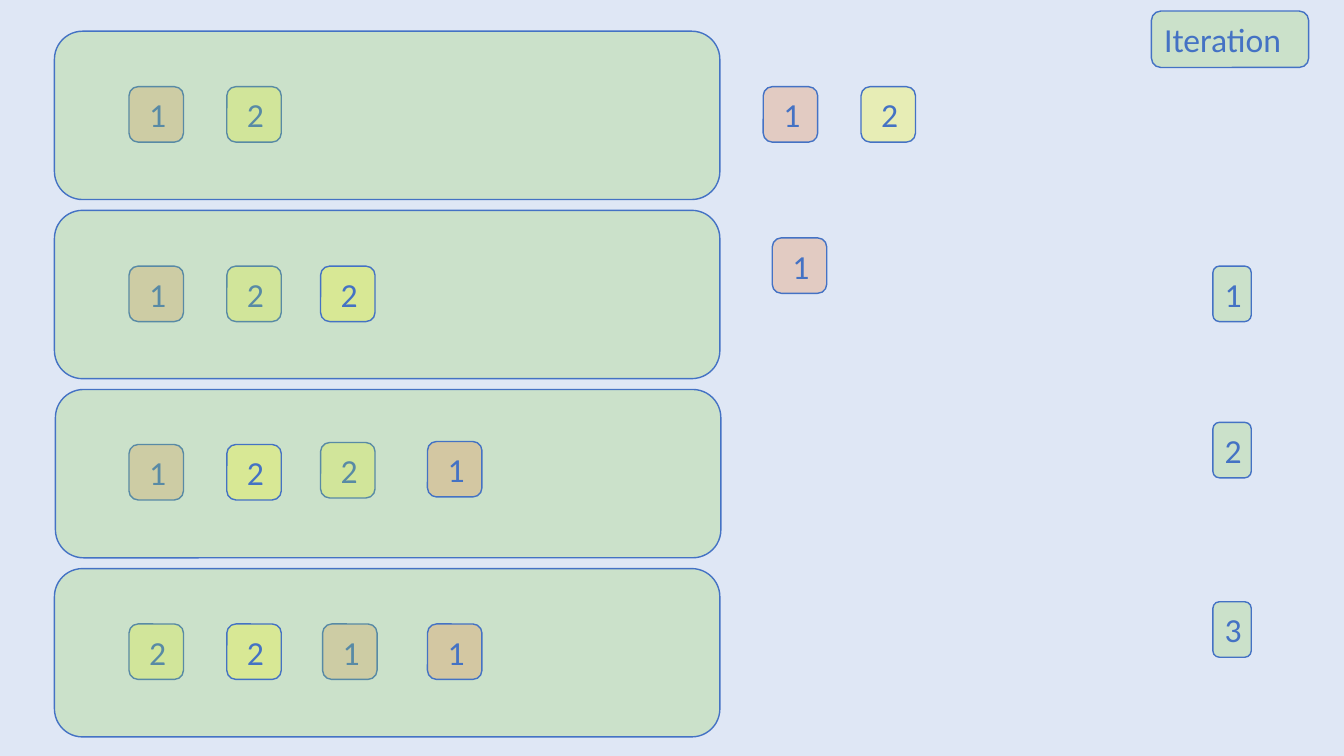
from lxml import etree
from pptx import Presentation
from pptx.dml.color import RGBColor
from pptx.enum.shapes import MSO_SHAPE
from pptx.enum.text import MSO_ANCHOR, MSO_AUTO_SIZE, PP_ALIGN
from pptx.oxml.ns import qn
from pptx.util import Inches, Pt

ROUNDED = MSO_SHAPE.ROUNDED_RECTANGLE
MIDDLE = MSO_ANCHOR.MIDDLE
GROW = MSO_AUTO_SIZE.SHAPE_TO_FIT_TEXT
LEFT = PP_ALIGN.LEFT

COLORS = {"background": "DFE7F5", "blue": "4472C4", "panel": "92D050",
          "1": "ED7D31", "2": "FFFF00"}
OPACITY = 26

# Each row: panel left, tiles behind the panel, tiles in front (digit, left, top),
# and the iteration label with its top.
ROWS = [
    (0.54, [("1", 1.28, 0.86), ("2", 2.25, 0.86)],
     [("1", 7.57, 0.86), ("2", 8.54, 0.86)], ("Iteration", 0.11)),
    (0.54, [("1", 1.28, 2.64), ("2", 2.25, 2.64)],
     [("2", 3.18, 2.64), ("1", 7.66, 2.36)], ("1", 2.64)),
    (0.55, [("1", 1.28, 4.41), ("2", 3.18, 4.39)],
     [("1", 4.24, 4.38), ("2", 2.25, 4.41)], ("2", 4.19)),
    (0.54, [("1", 3.2, 6.19), ("2", 1.28, 6.19)],
     [("1", 4.24, 6.19), ("2", 2.25, 6.19)], ("3", 5.97)),
]
PANEL_TOP, PANEL_PITCH = 0.31, 1.777
PANEL_WIDTH, PANEL_HEIGHT = 6.6, 1.67
TILE_WIDTH, TILE_HEIGHT = 0.54, 0.55


def add_box(slide, left, top, width, height, color, text=""):
    """Add a translucent rounded box with a blue outline and optional text."""
    box = slide.shapes.add_shape(ROUNDED, Inches(left), Inches(top),
                                 Inches(width), Inches(height))
    box.shadow.inherit = False
    box.fill.solid()
    box.fill.fore_color.rgb = RGBColor.from_string(COLORS[color])
    color_element = box.fill._xPr.find(qn("a:solidFill"))[0]
    etree.SubElement(color_element, qn("a:alpha"), val=str(OPACITY * 1000))
    box.line.color.rgb = RGBColor.from_string(COLORS["blue"])
    box.line.width = Pt(1)
    if text:
        frame = box.text_frame
        frame.text = text
        frame.word_wrap = True
        frame.auto_size = GROW
        frame.vertical_anchor = MIDDLE
        para = frame.paragraphs[0]
        para.alignment = LEFT
        font = para.runs[0].font
        font.name = "Calibri"
        font.size = Pt(24)
        font.color.rgb = RGBColor.from_string(COLORS["blue"])


def add_tiles(slide, tiles):
    for digit, left, top in tiles:
        add_box(slide, left, top, TILE_WIDTH, TILE_HEIGHT, digit, " " + digit)


def main():
    deck = Presentation()
    deck.slide_width, deck.slide_height = Inches(13.33), Inches(7.5)
    slide = deck.slides.add_slide(deck.slide_layouts[6])
    slide.background.fill.solid()
    slide.background.fill.fore_color.rgb = RGBColor.from_string(COLORS["background"])

    for row, (panel_left, behind, in_front, (label, label_top)) in enumerate(ROWS):
        add_tiles(slide, behind)
        add_box(slide, panel_left, PANEL_TOP + row * PANEL_PITCH,
                PANEL_WIDTH, PANEL_HEIGHT, "panel")
        add_tiles(slide, in_front)
        if row == 0:
            label_left, label_width, label_height = 11.42, 1.56, 0.56
        else:
            label_left, label_width, label_height = 12.03, 0.38, 0.55
        add_box(slide, label_left, label_top, label_width, label_height, "panel", label)

    deck.save("out.pptx")


if __name__ == "__main__":
    main()
